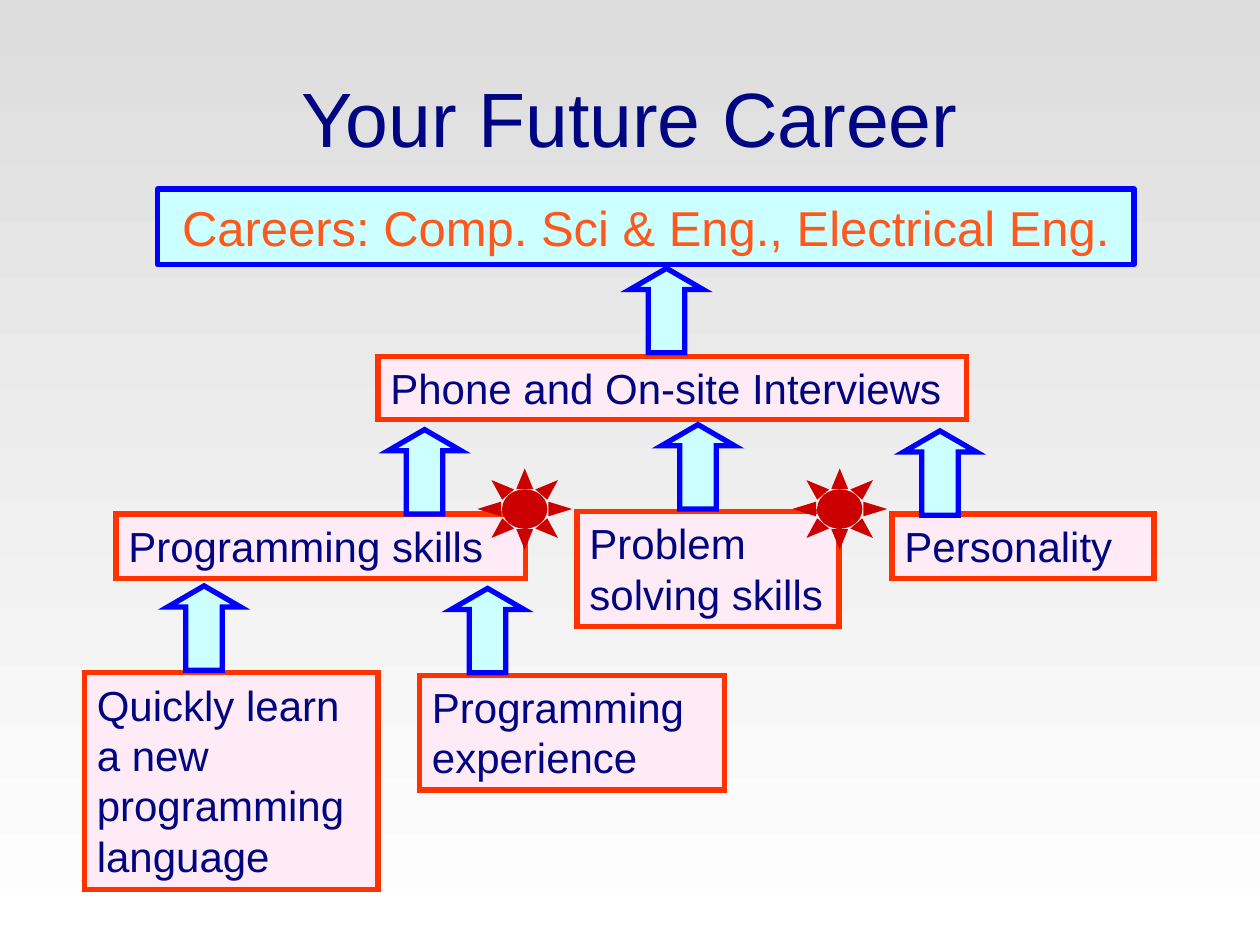
from lxml.etree import SubElement
from pptx import Presentation
from pptx.dml.color import RGBColor
from pptx.enum.shapes import MSO_SHAPE
from pptx.enum.text import MSO_ANCHOR, MSO_AUTO_SIZE, PP_ALIGN
from pptx.oxml.ns import qn
from pptx.util import Inches, Pt

rgb = RGBColor.from_string
NAVY, BLUE, CYAN = "000681", "0000FF", "CCFFFF"


def add_text(sp, text, size, color, align, anchor):
    tf = sp.text_frame
    for name, value in {"word_wrap": True, "vertical_anchor": anchor}.items():
        setattr(tf, name, value)
    p = tf.paragraphs[0]
    p.alignment = align
    r = p.add_run()
    r.text = text
    for name, value in {"name": "Arial", "size": Pt(size)}.items():
        setattr(r.font, name, value)
    r.font.color.rgb = rgb(color)


def add_shape(kind, at, fill, line, width=3, miter=True):
    sp = s.shapes.add_shape(kind, *[Inches(v) for v in at])
    sp.shadow.inherit = False
    sp.fill.solid()
    sp.fill.fore_color.rgb = rgb(fill)
    sp.line.color.rgb = rgb(line)
    sp.line.width = Pt(width)
    if miter:
        SubElement(sp.line._get_or_add_ln(), qn("a:miter"), lim="800000")
    return sp


prs = Presentation()
prs.slide_width, prs.slide_height = Inches(10), Inches(7.5)
s = prs.slides.add_slide(prs.slide_layouts[6])

# Background gradient, grey at the top to white
bg = s.background.fill
bg.gradient()
bg.gradient_angle = 270
for stop, color in zip(bg.gradient_stops, ("DDDDDD", "FFFFFF")):
    stop.color.rgb = rgb(color)

# Title
sp = s.shapes.add_textbox(Inches(0.5), Inches(0.3), Inches(9), Inches(1.25))
add_text(sp, "Your Future Career", 44, NAVY, PP_ALIGN.CENTER, MSO_ANCHOR.MIDDLE)

# Career goal
sp = add_shape(MSO_SHAPE.RECTANGLE, (1.25, 1.5, 7.75, 0.6), CYAN, BLUE, miter=False)
add_text(sp, "Careers: Comp. Sci & Eng., Electrical Eng.", 28, "FF581D",
         PP_ALIGN.CENTER, MSO_ANCHOR.MIDDLE)

# Steps: text, box, left and top of the arrow that leads up from it
steps = [
    ("Phone and On-site Interviews", (3, 2.83, 4.67, 0.5), (5, 2.13)),
    ("Programming skills", (0.92, 4.08, 3.25, 0.51), (3.08, 3.41)),
    ("Problem solving skills", (4.58, 4.06, 2.08, 0.91), (5.25, 3.37)),
    ("Personality", (7.08, 4.08, 2.08, 0.51), (7.17, 3.42)),
    ("Quickly learn a new programming language", (0.67, 5.34, 2.33, 1.72), (1.33, 4.65)),
    ("Programming experience", (3.33, 5.36, 2.42, 0.91), (3.58, 4.67)),
]
for text, box, arrow in steps:
    sp = add_shape(MSO_SHAPE.RECTANGLE, box, "FFEBF5", "FF3300")
    add_text(sp, text, 24, NAVY, PP_ALIGN.LEFT, MSO_ANCHOR.TOP)
    sp.text_frame.auto_size = MSO_AUTO_SIZE.SHAPE_TO_FIT_TEXT
    sp = add_shape(MSO_SHAPE.UP_ARROW, (*arrow, 0.58, 0.67), CYAN, BLUE)
    sp.adjustments[0], sp.adjustments[1] = 0.5, 0.29

# Suns that mark the two key skills
for left in (3.83, 6.33):
    add_shape(MSO_SHAPE.SUN, (left, 3.75, 0.67, 0.58), "CC0000", "CC0000", 1.75)

prs.save("out.pptx")
